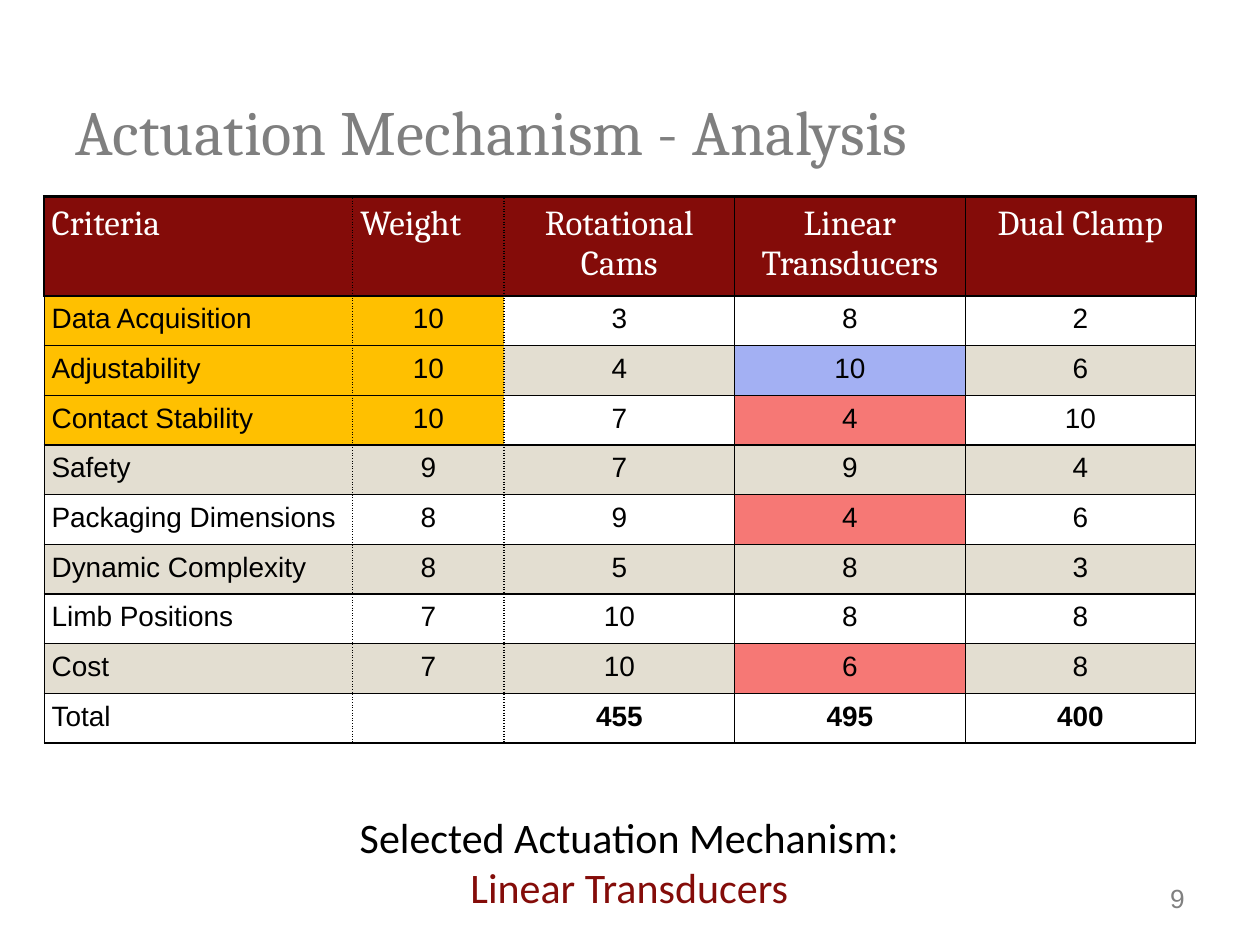
from lxml.etree import SubElement
from pptx import Presentation
from pptx.dml.color import RGBColor
from pptx.enum.text import MSO_ANCHOR, MSO_AUTO_SIZE, PP_ALIGN
from pptx.oxml.ns import qn
from pptx.util import Inches, Pt

COLORS = {
    "black": "000000",
    "white": "FFFFFF",
    "gray": "7F7F7F",
    "number": "808080",
    "maroon": "840C09",
    "gold": "FFC000",
    "beige": "E3DED1",
    "blue": "A3B0F3",
    "red": "F67875",
}

CRITERIA = [
    ("Criteria", "Weight", "Rotational Cams", "Linear Transducers", "Dual Clamp"),
    ("Data Acquisition", "10", "3", "8", "2"),
    ("Adjustability", "10", "4", "10", "6"),
    ("Contact Stability", "10", "7", "4", "10"),
    ("Safety", "9", "7", "9", "4"),
    ("Packaging Dimensions", "8", "9", "4", "6"),
    ("Dynamic Complexity", "8", "5", "8", "3"),
    ("Limb Positions", "7", "10", "8", "8"),
    ("Cost", "7", "10", "6", "8"),
    ("Total", "", "455", "495", "400"),
]
LAST_ROW = len(CRITERIA) - 1
LAST_COLUMN = len(CRITERIA[0]) - 1
COLUMN_WIDTHS = [2.45, 1.2, 1.83, 1.83, 1.83]
TABLE_HEIGHT = 4.34
HEADER_HEIGHT = 0.79
SCORE_HEIGHT = (TABLE_HEIGHT - HEADER_HEIGHT) / LAST_ROW
HIGHLIGHTS = {(2, 3): "blue", (3, 3): "red", (5, 3): "red", (8, 3): "red"}


def rgb(name):
    return RGBColor.from_string(COLORS[name])


def add_run(paragraph, text, font, size, color, bold=False):
    run = paragraph.add_run()
    run.text = text
    run.font.name = font
    run.font.size = Pt(size)
    run.font.bold = bold
    run.font.color.rgb = rgb(color)


def add_text_box(slide, left, top, width, height):
    frame = slide.shapes.add_textbox(
        Inches(left), Inches(top), Inches(width), Inches(height)).text_frame
    frame.word_wrap = True
    return frame


def add_title(slide, text):
    title = slide.shapes.title
    title.left, title.top = Inches(0.5), Inches(0.67)
    title.width, title.height = Inches(9), Inches(0.73)
    frame = title.text_frame
    frame.vertical_anchor = MSO_ANCHOR.MIDDLE
    frame.paragraphs[0].alignment = PP_ALIGN.LEFT
    add_run(frame.paragraphs[0], text, "Cambria", 36, "gray")


def cell_color(row, column):
    """Return the fill name of a cell, or None where it stays clear."""
    if row == 0:
        return "maroon"
    if row <= 3 and column <= 1:
        return "gold"
    return HIGHLIGHTS.get((row, column), "beige" if row % 2 == 0 else None)


def set_borders(cell, row, column):
    """Frame the header heavily and dot the lines around the weights."""
    header = row == 0
    edges = {
        "L": (1.5 if header and column == 0 else 0.75, column in (1, 2)),
        "R": (1.5 if header and column == LAST_COLUMN else 0.75, column in (0, 1)),
        "T": (1.5 if row <= 1 else 0.75, False),
        "B": (1.5 if header else 0.75, False),
    }
    properties = cell._tc.get_or_add_tcPr()
    for side, (width, dotted) in edges.items():
        line = SubElement(properties, qn(f"a:ln{side}"), w=str(Pt(width)))
        SubElement(SubElement(line, qn("a:solidFill")), qn("a:srgbClr"),
                   val=COLORS["black"])
        SubElement(line, qn("a:prstDash"), val="sysDot" if dotted else "solid")


def format_cell(cell, text, row, column):
    cell.margin_left = cell.margin_right = Inches(0.06)
    cell.margin_top = cell.margin_bottom = Inches(0.06)
    set_borders(cell, row, column)
    color = cell_color(row, column)
    if color:
        cell.fill.solid()
        cell.fill.fore_color.rgb = rgb(color)
    else:
        cell.fill.background()

    paragraph = cell.text_frame.paragraphs[0]
    left_aligned = column == 0 or (row == 0 and column == 1)
    paragraph.alignment = PP_ALIGN.LEFT if left_aligned else PP_ALIGN.CENTER
    if not text:
        # Keeps the empty line from stretching its row
        SubElement(paragraph._p, qn("a:endParaRPr"), sz="1600")
    elif row == 0:
        add_run(paragraph, text, "Cambria", 20, "white")
    else:
        add_run(paragraph, text, "Arial", 16, "black",
                bold=row == LAST_ROW and column > 0)


def add_criteria_table(slide):
    table = slide.shapes.add_table(
        len(CRITERIA), len(COLUMN_WIDTHS), Inches(0.35), Inches(1.56),
        Inches(sum(COLUMN_WIDTHS)), Inches(TABLE_HEIGHT)).table
    table.first_row = False
    table.horz_banding = False
    for column, width in zip(table.columns, COLUMN_WIDTHS):
        column.width = Inches(width)
    for row, texts in enumerate(CRITERIA):
        table.rows[row].height = Inches(SCORE_HEIGHT if row else HEADER_HEIGHT)
        for column, text in enumerate(texts):
            format_cell(table.cell(row, column), text, row, column)


def add_selection(slide):
    frame = add_text_box(slide, 2.65, 6.39, 4.69, 0.91)
    frame.auto_size = MSO_AUTO_SIZE.SHAPE_TO_FIT_TEXT
    label, choice = frame.paragraphs[0], frame.add_paragraph()
    label.alignment = choice.alignment = PP_ALIGN.CENTER
    add_run(label, "Selected Actuation Mechanism:", "Calibri", 24, "black")
    add_run(choice, "Linear Transducers", "Calibri", 24, "maroon")


def add_slide_number(slide, number):
    paragraph = add_text_box(slide, 7.06, 6.95, 2.44, 0.4).paragraphs[0]
    paragraph.alignment = PP_ALIGN.RIGHT
    add_run(paragraph, number, "Arial", 15, "number")


def main():
    deck = Presentation()
    deck.slide_width, deck.slide_height = Inches(10), Inches(7.5)
    slide = deck.slides.add_slide(deck.slide_layouts[5])
    add_slide_number(slide, "9")
    add_title(slide, "Actuation Mechanism - Analysis")
    add_selection(slide)
    add_criteria_table(slide)
    deck.save("out.pptx")


if __name__ == "__main__":
    main()
